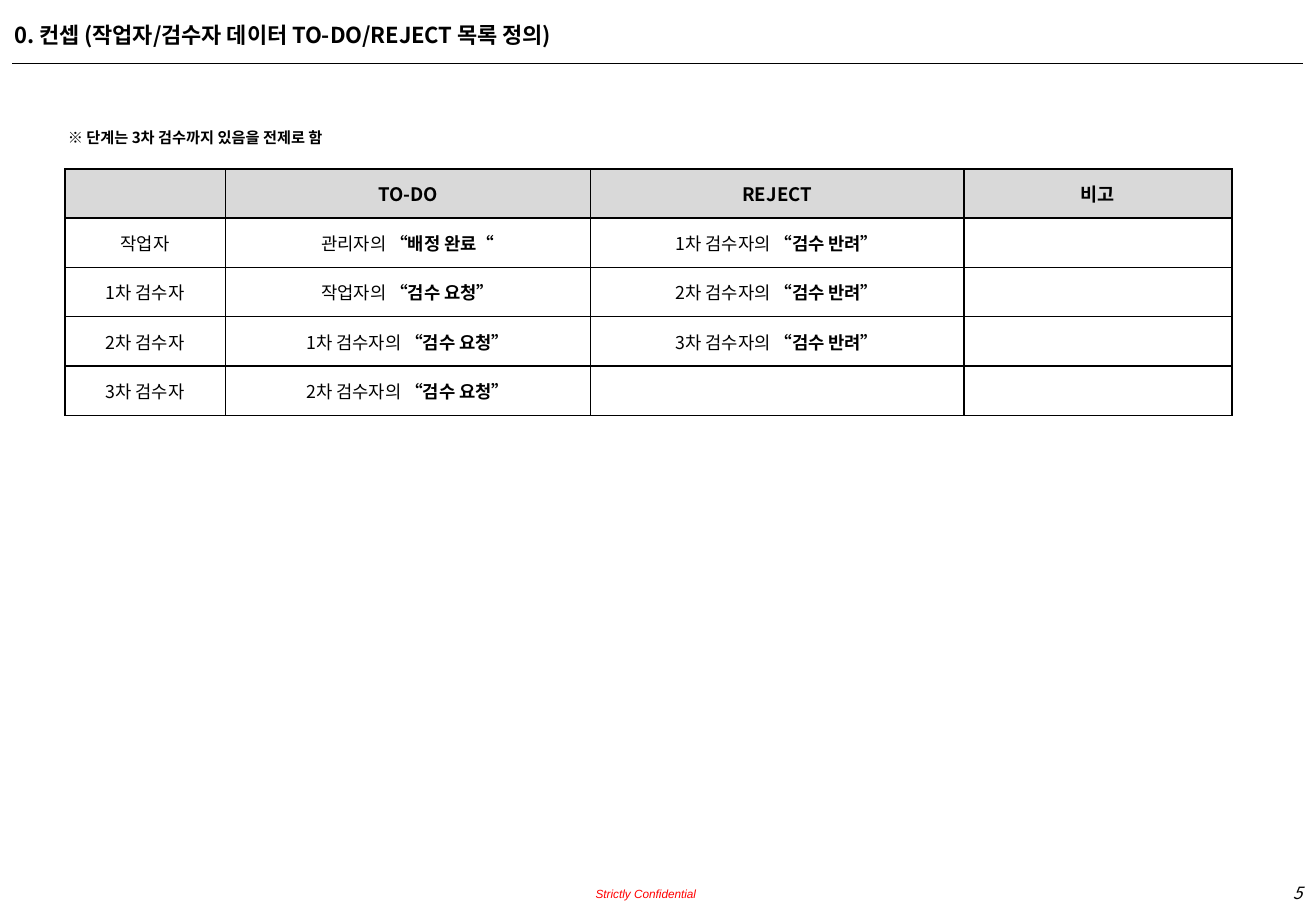
from dataclasses import dataclass, field
from typing import Any

from lxml import etree
from pptx import Presentation
from pptx import util as u
from pptx.dml.color import RGBColor
from pptx.enum import shapes, text
from pptx.oxml import ns

BLACK = RGBColor(0x00, 0x00, 0x00)
RED = RGBColor(0xFF, 0x00, 0x00)
HEADER_GRAY = RGBColor(0xD9, 0xD9, 0xD9)

KOREAN_FONT = "Noto Sans CJK KR"
HEADER_FORMAT = {"size": u.Pt(11), "bold": True}
BODY_FORMAT = {"size": u.Pt(10.5), "bold": False}
STATUS_FORMAT = {"size": u.Pt(10.5), "bold": True}

COLUMN_WIDTHS = (95.2, 216.5, 221.2, 159)
ROW_HEIGHT = 29.24
BORDER_WIDTH = 1

HEADERS = ("", "TO-DO", "REJECT", "비고")
# Each cell holds a plain part and a bold status part
ROWS = (
    (("작업자", ""), ("관리자의 ", "“배정 완료“"), ("1차 검수자의 ", "“검수 반려”"), ("", "")),
    (("1차 검수자", ""), ("작업자의 ", "“검수 요청”"), ("2차 검수자의 ", "“검수 반려”"), ("", "")),
    (("2차 검수자", ""), ("1차 검수자의 ", "“검수 요청”"), ("3차 검수자의 ", "“검수 반려”"), ("", "")),
    (("3차 검수자", ""), ("2차 검수자의 ", "“검수 요청”"), ("", ""), ("", "")),
)


@dataclass(frozen=True)
class Label:
    content: str
    left: float
    top: float
    width: float
    height: float
    font: dict[str, Any]
    color: RGBColor = BLACK
    paragraph: dict[str, Any] = field(default_factory=dict)
    frame: dict[str, Any] = field(default_factory=dict)


RIGHT = {"alignment": text.PP_ALIGN.RIGHT}
GROWING = {"auto_size": text.MSO_AUTO_SIZE.SHAPE_TO_FIT_TEXT}
NO_MARGINS = {f"margin_{side}": 0 for side in ("left", "top", "right", "bottom")}

LABELS = (
    Label("Strictly Confidential", 302.4, 517, 110.2, 17.3,
          {"size": u.Pt(7), "italic": True, "name": "Arial"}, RED, RIGHT,
          {"vertical_anchor": text.MSO_ANCHOR.BOTTOM, **NO_MARGINS}),
    Label("5", 658.8, 519.8, 120.2, 19.4,
          {"size": u.Pt(10), "italic": True}, paragraph=RIGHT, frame=GROWING),
    Label("0. 컨셉 (작업자/검수자 데이터 TO-DO/REJECT 목록 정의)", 1.4, 9.4, 757.4, 23,
          {"size": u.Pt(13), "bold": True}, frame=GROWING),
    Label("※ 단계는 3차 검수까지 있음을 전제로 함", 33.1, 67, 187.9, 21.6,
          {"size": u.Pt(9), "bold": True}, paragraph={"line_spacing": 1.5}, frame=GROWING),
)


def apply(target: Any, values: dict[str, Any]) -> None:
    for name, value in values.items():
        setattr(target, name, value)


def add_run(paragraph: Any, content: str, font: dict[str, Any], color: RGBColor = BLACK) -> None:
    run = paragraph.add_run()
    run.text = content
    apply(run.font, {"name": KOREAN_FONT, **font})
    run.font.color.rgb = color
    # East Asian glyphs take their own typeface
    etree.SubElement(run.font._element, ns.qn("a:ea"), typeface=run.font.name)


def add_label(slide: Any, label: Label) -> None:
    box = slide.shapes.add_textbox(
        u.Pt(label.left), u.Pt(label.top), u.Pt(label.width), u.Pt(label.height))
    apply(box.text_frame, {"word_wrap": True, **label.frame})
    paragraph = box.text_frame.paragraphs[0]
    apply(paragraph, label.paragraph)
    add_run(paragraph, label.content, label.font, label.color)


def add_title_rule(slide: Any) -> None:
    rule = slide.shapes.add_connector(
        shapes.MSO_CONNECTOR.STRAIGHT, u.Pt(7.2), u.Pt(37.6), u.Pt(772.6), u.Pt(37.6))
    rule.line.color.rgb = BLACK
    rule.line.width = u.Pt(0.75)
    etree.SubElement(rule._element.spPr, ns.qn("a:effectLst"))


def add_borders(cell: Any) -> None:
    properties = cell._tc.get_or_add_tcPr()
    for index, side in enumerate(("lnL", "lnR", "lnT", "lnB")):
        border = etree.Element(ns.qn(f"a:{side}"), w=str(u.Pt(BORDER_WIDTH)))
        fill = etree.SubElement(border, ns.qn("a:solidFill"))
        etree.SubElement(fill, ns.qn("a:srgbClr"), val=str(BLACK))
        properties.insert(index, border)


def fill_cell(cell: Any, parts: list[tuple[str, dict[str, Any]]]) -> None:
    cell.vertical_anchor = text.MSO_ANCHOR.MIDDLE
    paragraph = cell.text_frame.paragraphs[0]
    paragraph.alignment = text.PP_ALIGN.CENTER
    for content, font in parts:
        if content:
            add_run(paragraph, content, font)
    if not paragraph.runs:
        # Keeps an empty cell from stretching its row
        etree.SubElement(paragraph._p, ns.qn("a:endParaRPr"), sz="1050")
    add_borders(cell)


def add_stage_table(slide: Any) -> None:
    row_count = len(ROWS) + 1
    table = slide.shapes.add_table(
        row_count, len(HEADERS), u.Pt(38.4), u.Pt(100.1),
        u.Pt(sum(COLUMN_WIDTHS)), u.Pt(ROW_HEIGHT * row_count)).table
    apply(table, {"first_row": False, "horz_banding": False})
    for column, width in zip(table.columns, COLUMN_WIDTHS):
        column.width = u.Pt(width)
    for row in table.rows:
        row.height = u.Pt(ROW_HEIGHT)

    # Header row
    for column, header in enumerate(HEADERS):
        cell = table.cell(0, column)
        cell.fill.solid()
        cell.fill.fore_color.rgb = HEADER_GRAY
        fill_cell(cell, [(header, HEADER_FORMAT)])

    # Stage rows
    for row, entries in enumerate(ROWS, start=1):
        for column, (source, status) in enumerate(entries):
            cell = table.cell(row, column)
            cell.fill.background()
            fill_cell(cell, [(source, BODY_FORMAT), (status, STATUS_FORMAT)])


def main() -> None:
    presentation = Presentation()
    presentation.slide_width = u.Pt(780)
    presentation.slide_height = u.Pt(540)
    slide = presentation.slides.add_slide(presentation.slide_layouts[6])

    for label in LABELS:
        add_label(slide, label)
    add_title_rule(slide)
    add_stage_table(slide)

    presentation.save("out.pptx")


if __name__ == "__main__":
    main()
